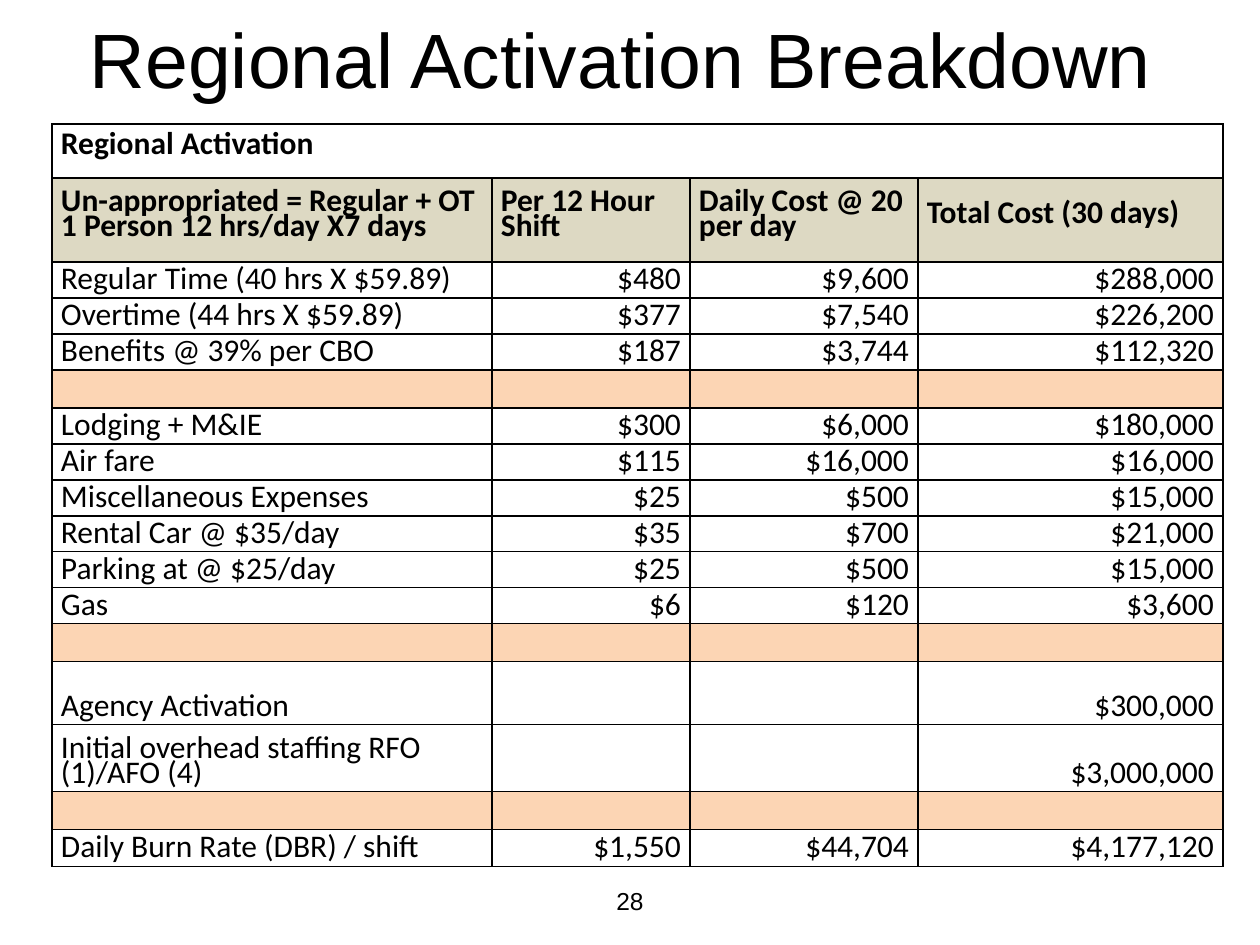
from dataclasses import dataclass
from typing import Optional

import pptx
import pptx.dml.color
import pptx.enum.text
import pptx.oxml
import pptx.oxml.ns
import pptx.util

EMU_PER_PX = 914400 / 126
ALIGN = pptx.enum.text.PP_ALIGN
ANCHOR = pptx.enum.text.MSO_ANCHOR


@dataclass(frozen=True)
class Theme:
    ink: str = "000000"
    heading_fill: str = "DDD9C3"
    divider_fill: str = "FCD5B4"
    slide_font: str = "Arial"
    table_font: str = "Calibri"
    title_size: int = 44
    table_size: int = 18
    number_size: int = 14
    line_spacing: int = 14
    border_width: int = 1


@dataclass(frozen=True)
class Label:
    text: str
    left: int
    top: int
    width: int
    height: int
    size: int
    anchor: ANCHOR


@dataclass(frozen=True)
class CostRow:
    texts: tuple[str, ...] = ("", "", "", "")
    height: int = 36
    fill: Optional[str] = None
    heading: bool = False


THEME = Theme()
TABLE_LEFT, TABLE_TOP, CELL_INSET = 52, 124, 9
COLUMN_WIDTHS = (440, 198, 228, 305)

LABELS = (
    Label("Regional Activation Breakdown", 54, 0, 1134, 115, THEME.title_size, ANCHOR.MIDDLE),
    Label("28", 483, 880, 294, 65, THEME.number_size, ANCHOR.TOP),
)

ROWS = (
    CostRow(("Regional Activation", "", "", ""), 54, heading=True),
    CostRow(("Un-appropriated = Regular + OT\n1 Person 12 hrs/day X7 days", "Per 12 Hour Shift",
             "Daily Cost @ 20 per day", "Total Cost (30 days)"),
            84, THEME.heading_fill, heading=True),
    CostRow(("Regular Time (40 hrs X $59.89)", "$480", "$9,600", "$288,000")),
    CostRow(("Overtime (44 hrs X $59.89)", "$377", "$7,540", "$226,200")),
    CostRow(("Benefits @ 39% per CBO", "$187", "$3,744", "$112,320")),
    CostRow(height=38, fill=THEME.divider_fill),
    CostRow(("Lodging + M&IE", "$300", "$6,000", "$180,000")),
    CostRow(("Air fare", "$115", "$16,000", "$16,000")),
    CostRow(("Miscellaneous Expenses", "$25", "$500", "$15,000")),
    CostRow(("Rental Car @ $35/day", "$35", "$700", "$21,000")),
    CostRow(("Parking at @ $25/day", "$25", "$500", "$15,000")),
    CostRow(("Gas", "$6", "$120", "$3,600")),
    CostRow(fill=THEME.divider_fill),
    CostRow(("Agency Activation", "", "", "$300,000"), 63),
    CostRow(("Initial overhead staffing RFO (1)/AFO (4)", "", "", "$3,000,000"), 67),
    CostRow(fill=THEME.divider_fill),
    CostRow(("Daily Burn Rate (DBR) / shift", "$1,550", "$44,704", "$4,177,120"), 37),
)


def px(length: int) -> pptx.util.Emu:
    return pptx.util.Emu(round(length * EMU_PER_PX))


def color(value: str) -> pptx.dml.color.RGBColor:
    return pptx.dml.color.RGBColor.from_string(value)


def add_span(para, text: str, font: str, size: int, bold: bool = False) -> None:
    span = para.add_run()
    span.text = text
    span.font.name = font
    span.font.size = pptx.util.Pt(size)
    span.font.bold = bold
    span.font.color.rgb = color(THEME.ink)


def add_label(page, label: Label) -> None:
    box = page.shapes.add_textbox(px(label.left), px(label.top), px(label.width), px(label.height))
    box.text_frame.word_wrap = True
    box.text_frame.vertical_anchor = label.anchor
    para = box.text_frame.paragraphs[0]
    para.alignment = ALIGN.CENTER
    add_span(para, label.text, THEME.slide_font, label.size)


def add_borders(cell) -> None:
    properties = cell._tc.get_or_add_tcPr()
    width = pptx.util.Pt(THEME.border_width)
    for side in ("lnL", "lnR", "lnT", "lnB"):
        properties.append(pptx.oxml.parse_xml(
            f'<a:{side} {pptx.oxml.ns.nsdecls("a")} w="{width}"><a:solidFill>'
            f'<a:srgbClr val="{THEME.ink}"/></a:solidFill></a:{side}>'))


def fill_cell(cell, row: CostRow, column: int) -> None:
    add_borders(cell)
    if row.fill:
        cell.fill.solid()
        cell.fill.fore_color.rgb = color(row.fill)
    else:
        cell.fill.background()
    cell.margin_left = cell.margin_right = px(CELL_INSET)
    cell.margin_top = cell.margin_bottom = 0
    cell.vertical_anchor = ANCHOR.MIDDLE if row.heading else ANCHOR.BOTTOM

    para = cell.text_frame.paragraphs[0]
    para.line_spacing = pptx.util.Pt(THEME.line_spacing)
    para.alignment = ALIGN.LEFT if row.heading or column == 0 else ALIGN.RIGHT
    if not row.texts[column]:
        return
    for index, line in enumerate(row.texts[column].split("\n")):
        if index:
            para.add_line_break()
        add_span(para, line, THEME.table_font, THEME.table_size, row.heading)


def add_cost_table(page) -> None:
    frame = page.shapes.add_table(
        len(ROWS), len(COLUMN_WIDTHS), px(TABLE_LEFT), px(TABLE_TOP),
        px(sum(COLUMN_WIDTHS)), px(sum(row.height for row in ROWS)))
    table = frame.table
    table.first_row = table.horz_banding = False
    for column, width in enumerate(COLUMN_WIDTHS):
        table.columns[column].width = px(width)
    for index, row in enumerate(ROWS):
        table.rows[index].height = px(row.height)
        for column in range(len(COLUMN_WIDTHS)):
            fill_cell(table.cell(index, column), row, column)
    table.cell(0, 0).merge(table.cell(0, len(COLUMN_WIDTHS) - 1))


def main() -> None:
    deck = pptx.Presentation()
    deck.slide_width, deck.slide_height = px(1260), px(945)
    page = deck.slides.add_slide(deck.slide_layouts[6])
    for label in LABELS:
        add_label(page, label)
    add_cost_table(page)
    deck.save("out.pptx")


if __name__ == "__main__":
    main()
